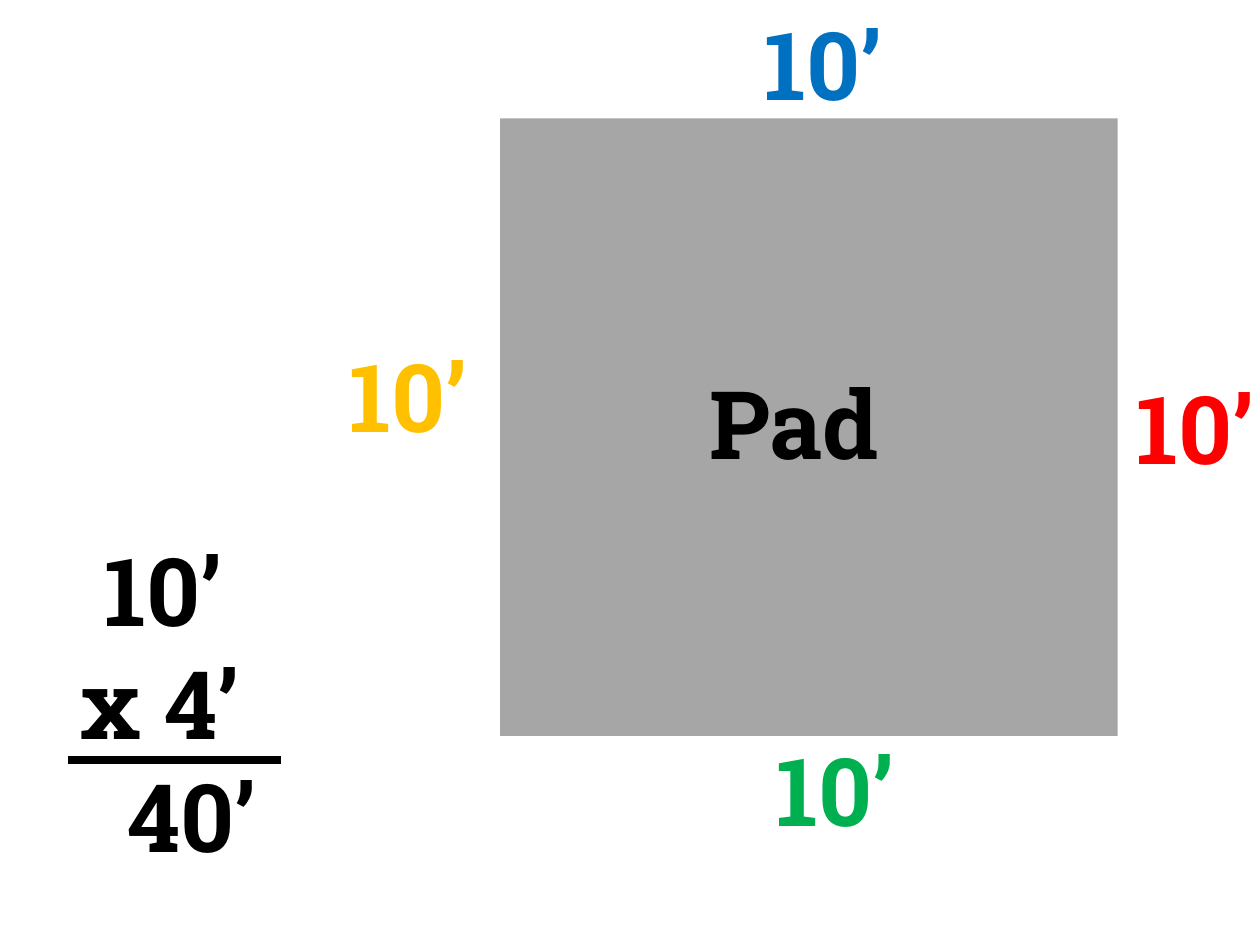
from dataclasses import dataclass

from lxml import etree
from pptx import Presentation
from pptx.dml.color import RGBColor
from pptx.enum import shapes, text
from pptx.oxml import ns
from pptx.slide import Slide
from pptx.util import Inches, Pt

BLACK = RGBColor(0x00, 0x00, 0x00)
GREY = RGBColor(0xA6, 0xA6, 0xA6)
RED = RGBColor(0xFF, 0x00, 0x00)
BLUE = RGBColor(0x00, 0x70, 0xC0)
GOLD = RGBColor(0xFF, 0xC0, 0x00)
GREEN = RGBColor(0x00, 0xB0, 0x50)

FONT_FORMAT = {"name": "Roboto Slab", "size": Pt(54), "bold": True}
LABEL_HEIGHT = 1.01
PAD_SIZE = 4.9


@dataclass(frozen=True)
class Line:
    words: str
    indent: float = 0


@dataclass(frozen=True)
class Label:
    left: float
    top: float
    width: float
    color: RGBColor
    lines: tuple[Line, ...] = (Line("10’"),)
    height: float = LABEL_HEIGHT
    alignment: text.PP_ALIGN = text.PP_ALIGN.CENTER


LABELS = (
    Label(8.71, 2.89, 1.55, RED),
    Label(5.76, 0, 1.55, BLUE),
    Label(2.57, 2.63, 1.34, GOLD),
    Label(5.95, 5.76, 1.36, GREEN),
    Label(5.53, 2.85, 1.79, BLACK, (Line("Pad"),),
          alignment=text.PP_ALIGN.LEFT),
    Label(0.54, 4.17, 2.58, BLACK,
          (Line("10’", 0.19), Line("x 4’"), Line("40’", 0.37)),
          height=2.83, alignment=text.PP_ALIGN.LEFT),
)


def add_pad(slide: Slide) -> None:
    pad = slide.shapes.add_shape(
        shapes.MSO_SHAPE.RECTANGLE,
        Inches(3.97), Inches(0.94), Inches(PAD_SIZE), Inches(PAD_SIZE))
    pad.shadow.inherit = False
    pad.fill.solid()
    pad.fill.fore_color.rgb = GREY
    pad.line.fill.background()


def add_label(slide: Slide, label: Label) -> None:
    box = slide.shapes.add_textbox(
        Inches(label.left), Inches(label.top),
        Inches(label.width), Inches(label.height))
    frame = box.text_frame
    frame.word_wrap = True
    frame.auto_size = text.MSO_AUTO_SIZE.SHAPE_TO_FIT_TEXT
    for index, line in enumerate(label.lines):
        paragraph = frame.add_paragraph() if index else frame.paragraphs[0]
        paragraph.alignment = label.alignment
        if line.indent:
            properties = paragraph._p.get_or_add_pPr()
            properties.set("marL", str(Inches(line.indent)))
        run = paragraph.add_run()
        run.text = line.words
        for name, value in FONT_FORMAT.items():
            setattr(run.font, name, value)
        run.font.color.rgb = label.color


def add_sum_rule(slide: Slide) -> None:
    """Draw the line between the multiplication and its result."""
    rule = slide.shapes.add_connector(
        shapes.MSO_CONNECTOR.STRAIGHT,
        Inches(0.54), Inches(6.03), Inches(2.23), Inches(6.03))
    rule.line.color.rgb = BLACK
    rule.line.width = Pt(4.5)
    etree.SubElement(rule._element.spPr, ns.qn("a:effectLst"))


def main() -> None:
    presentation = Presentation()
    presentation.slide_width = Inches(10)
    presentation.slide_height = Inches(7.5)
    slide = presentation.slides.add_slide(presentation.slide_layouts[6])
    add_pad(slide)
    for label in LABELS:
        add_label(slide, label)
    add_sum_rule(slide)
    presentation.save("out.pptx")


if __name__ == "__main__":
    main()
